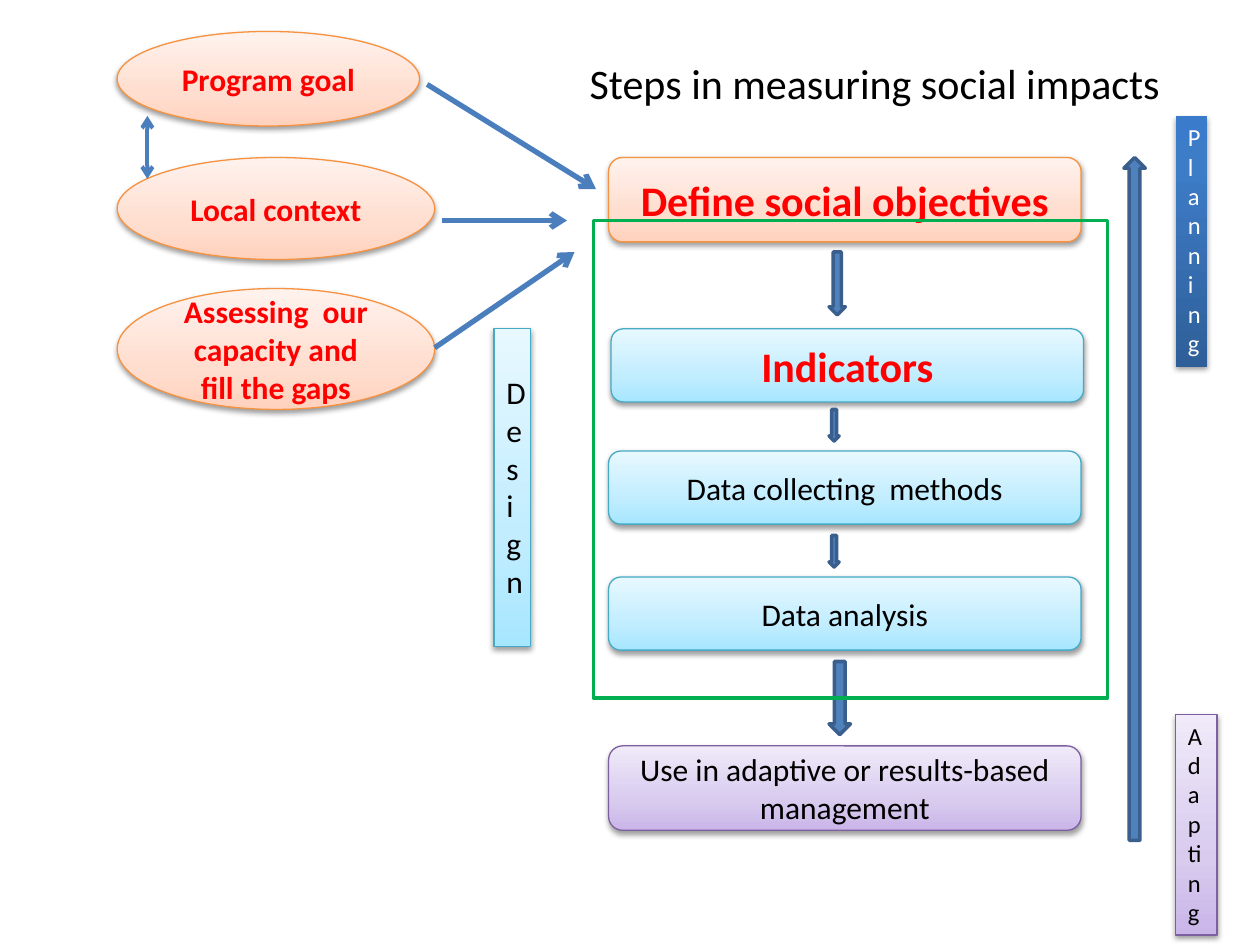
from copy import deepcopy

from lxml.etree import SubElement
from pptx import Presentation
from pptx.dml.color import RGBColor
from pptx.enum.shapes import MSO_CONNECTOR, MSO_SHAPE
from pptx.enum.text import MSO_ANCHOR, PP_ALIGN
from pptx.oxml.ns import qn
from pptx.util import Inches, Pt

BLACK, RED, WHITE = "000000", "FF0000", "FFFFFF"
ORANGE = ([(0, "FFD2BD"), (0.35, "FFDED0"), (1, "FFF2ED")], "F69240")
AQUA = ([(0, "A7E6FF"), (0.35, "C1EDFF"), (1, "E7F8FF")], "46AAC5")
PURPLE = ([(0, "C9B5E8"), (0.35, "D8CBEE"), (1, "F0EAF9")], "7D60A0")
BLUE = ([(0, "2F5F99"), (0.8, "3D7CC7"), (1, "3A7CCB")], None)


def rgb(value):
    return RGBColor.from_string(value)


class ImpactSlide:
    """Hold the style and the current slide, and draw each kind of element."""

    font = "Calibri"

    def __init__(self, prs):
        self.slide = prs.slides.add_slide(prs.slide_layouts[5])

    def set_text(self, sp, text, size, color, bold=False, align=PP_ALIGN.CENTER,
                 anchor=MSO_ANCHOR.MIDDLE):
        tf = sp.text_frame
        tf.word_wrap = True
        tf.vertical_anchor = anchor
        tf.text = text
        p = tf.paragraphs[0]
        p.alignment = align
        font = p.runs[0].font
        font.name, font.size, font.bold = self.font, Pt(size), bold
        font.color.rgb = rgb(color)

    def title(self, text, *box):
        sp = self.slide.shapes.title
        sp.left, sp.top, sp.width, sp.height = map(Inches, box)
        self.set_text(sp, text, 24, BLACK, align=PP_ALIGN.LEFT)

    def shape(self, kind, box, line=None, width=0.75):
        sp = self.slide.shapes.add_shape(kind, *map(Inches, box))
        sp.shadow.inherit = False
        if line:
            sp.line.color.rgb = rgb(line)
            sp.line.width = Pt(width)
        else:
            sp.line.fill.background()
        return sp

    def box(self, kind, box, style, text, size, color, **options):
        stops, line = style
        sp = self.shape(kind, box, line)
        sp.fill.gradient()
        sp.fill.gradient_angle = 90
        spPr = sp._element.spPr
        gs_list = spPr.find(qn("a:gradFill")).find(qn("a:gsLst"))
        gs_list.append(deepcopy(gs_list[0]))
        for stop, (position, value) in zip(sp.fill.gradient_stops, stops):
            stop.position = position
            stop.color.rgb = rgb(value)
        shadow = SubElement(spPr.find(qn("a:effectLst")), qn("a:outerShdw"),
                            blurRad="40000", dist="20000", dir="5400000", rotWithShape="0")
        shade = SubElement(shadow, qn("a:srgbClr"), val=BLACK)
        SubElement(shade, qn("a:alpha"), val="38000")
        self.set_text(sp, text, size, color, **options)
        return sp

    def step(self, left, top, height, style, text, size=18, color=BLACK, bold=False):
        self.box(MSO_SHAPE.ROUNDED_RECTANGLE, (left, top, 3.75, height), style,
                 text, size, color, bold=bold)

    def source(self, top, width, height, text):
        self.box(MSO_SHAPE.OVAL, (0.93, top, width, height), ORANGE, text, 18, RED, bold=True)

    def phase(self, box, style, text, size, color, margin_top=0.05):
        sp = self.box(MSO_SHAPE.RECTANGLE, box, style, text, size, color,
                      align=PP_ALIGN.LEFT, anchor=MSO_ANCHOR.TOP)
        sp.text_frame.margin_top = Inches(margin_top)

    def block_arrow(self, kind, *box):
        sp = self.shape(kind, box, "3A5F8C", 2)
        sp.fill.solid()
        sp.fill.fore_color.rgb = rgb("4F81BD")

    def frame(self, *box):
        self.shape(MSO_SHAPE.RECTANGLE, box, "00B050", 2).fill.background()

    def arrow(self, start, end, width=3, ends=("tailEnd",)):
        cn = self.slide.shapes.add_connector(MSO_CONNECTOR.STRAIGHT, *map(Inches, start + end))
        cn.line.color.rgb = rgb("4B7EBC")
        cn.line.width = Pt(width)
        spPr = cn._element.spPr
        for name in ends:
            SubElement(spPr.find(qn("a:ln")), qn(f"a:{name}"), type="arrow")
        SubElement(spPr, qn("a:effectLst"))


def main():
    prs = Presentation()
    prs.slide_width, prs.slide_height = Inches(10), Inches(7.5)
    s = ImpactSlide(prs)
    s.title("Steps in measuring social impacts", 4.58, 0.38, 5.3, 0.55)

    s.step(4.83, 1.25, 0.67, ORANGE, "Define social objectives", 24, RED, True)
    s.step(4.85, 2.61, 0.58, AQUA, "Indicators", 24, RED, True)
    s.step(4.83, 3.58, 0.58, AQUA, "Data collecting  methods")
    s.step(4.83, 4.58, 0.58, AQUA, "Data analysis")
    s.step(4.83, 5.92, 0.67, PURPLE, "Use in adaptive or results-based management")

    for top, width, height in [(2, 0.13, 0.5), (3.25, 0.08, 0.25),
                               (4.25, 0.08, 0.25), (5.25, 0.17, 0.58)]:
        s.block_arrow(MSO_SHAPE.DOWN_ARROW, 6.58, top, width, height)
    s.block_arrow(MSO_SHAPE.UP_ARROW, 8.92, 1.25, 0.17, 5.42)

    s.phase((9.33, 0.92, 0.25, 1.99), BLUE, "Planning", 14, WHITE)
    s.phase((9.33, 5.67, 0.33, 1.75), PURPLE, "Adapting", 14, BLACK)
    s.frame(4.71, 1.75, 4.08, 3.79)

    s.source(0.25, 2.4, 0.75, "Program goal")
    s.source(1.25, 2.52, 0.81, "Local context")
    s.source(2.29, 2.52, 0.96, "Assessing  our capacity and fill the gaps")
    s.arrow((3.39, 0.67), (4.73, 1.5))
    s.arrow((3.51, 1.75), (4.5, 1.75))
    s.arrow((3.45, 2.76), (4.56, 2))
    s.phase((3.92, 2.61, 0.29, 2.52), AQUA, "Design", 18, BLACK, margin_top=0.35)
    s.arrow((1.17, 0.92), (1.17, 1.42), 2.25, ("headEnd", "tailEnd"))

    prs.save("out.pptx")


if __name__ == "__main__":
    main()
